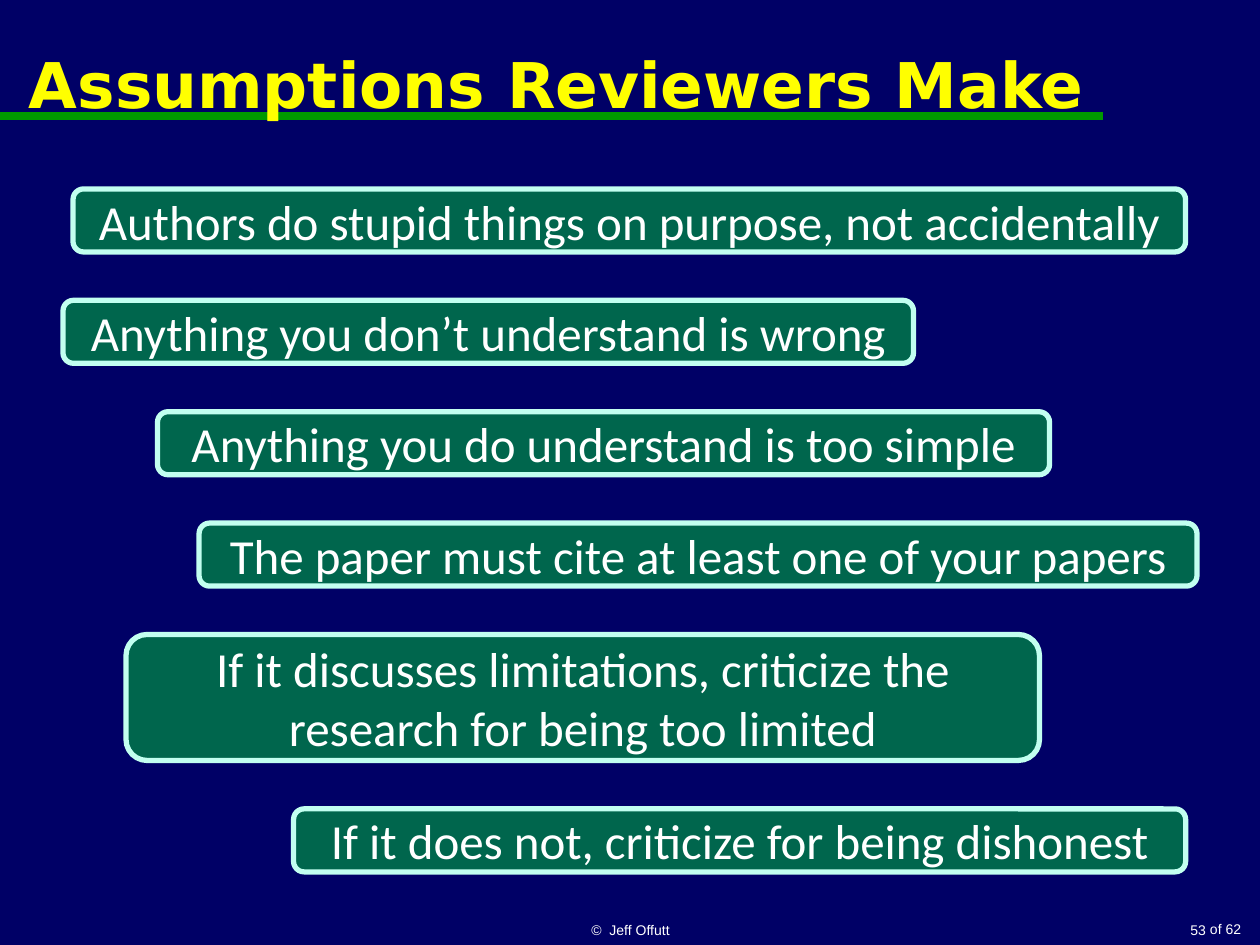
from dataclasses import dataclass

import pptx
import pptx.dml.color
import pptx.enum.shapes
import pptx.enum.text
import pptx.oxml.ns
import pptx.util
from lxml import etree

Inches = pptx.util.Inches
Pt = pptx.util.Pt
RGBColor = pptx.dml.color.RGBColor
Align = pptx.enum.text.PP_ALIGN
Anchor = pptx.enum.text.MSO_ANCHOR

NAVY = RGBColor(0x00, 0x00, 0x66)
RULE_GREEN = RGBColor(0x00, 0x99, 0x00)
BOX_GREEN = RGBColor(0x00, 0x66, 0x4D)
MINT = RGBColor(0xC2, 0xFF, 0xF0)
YELLOW = RGBColor(0xFF, 0xFF, 0x00)
WHITE = RGBColor(0xFF, 0xFF, 0xFF)

FIRST_TOP, LAST_BOTTOM = 1.5, 6.92


@dataclass(frozen=True)
class Assumption:
    text: str
    left: float
    width: float
    height: float = 0.5


@dataclass(frozen=True)
class Label:
    text: str
    left: float
    top: float
    width: float
    height: float
    align: Align
    anchor: Anchor = Anchor.BOTTOM
    font: str = "Arial"
    size: int = 8
    color: RGBColor = WHITE
    bold: bool = False
    wrap: bool = True


ASSUMPTIONS = [
    Assumption("Authors do stupid things on purpose, not accidentally", 0.58, 8.83),
    Assumption("Anything you don’t understand is wrong", 0.5, 6.75),
    Assumption("Anything you do understand is too simple", 1.25, 7.08),
    Assumption("The paper must cite at least one of your papers", 1.58, 7.92),
    Assumption("If it discusses limitations, criticize the research for being too limited",
               1, 7.25, 1),
    Assumption("If it does not, criticize for being dishonest", 2.33, 7.08),
]

LABELS = [
    Label("of 62", 9.5, 7.26, 0.45, 0.24, Align.RIGHT, Anchor.TOP, wrap=False),
    Label("Assumptions Reviewers Make", 0.08, 0, 8.67, 1.33, Align.CENTER,
          Anchor.MIDDLE, "DejaVu Sans", 36, YELLOW, bold=True),
    Label("©  Jeff Offutt", 3.42, 7.17, 3.17, 0.33, Align.CENTER),
    Label("53", 7.92, 7.17, 1.75, 0.33, Align.RIGHT),
]


def write_text(frame: pptx.text.text.TextFrame, text: str, align: Align, anchor: Anchor,
               font: str, size: int, color: RGBColor, bold: bool = False,
               wrap: bool = True) -> None:
    frame.word_wrap = wrap
    frame.vertical_anchor = anchor
    paragraph = frame.paragraphs[0]
    paragraph.text = text
    paragraph.alignment = align
    paragraph.font.name = font
    paragraph.font.size = Pt(size)
    paragraph.font.bold = bold
    paragraph.font.color.rgb = color


def draw_title_rule(slide: pptx.slide.Slide) -> None:
    rule = slide.shapes.add_connector(pptx.enum.shapes.MSO_CONNECTOR.STRAIGHT,
                                      Inches(0), Inches(0.92), Inches(8.75), Inches(0.92))
    rule.line.color.rgb = RULE_GREEN
    rule.line.width = Pt(4.5)
    etree.SubElement(rule._element.spPr, pptx.oxml.ns.qn("a:effectLst"))


def draw_label(slide: pptx.slide.Slide, label: Label) -> None:
    box = slide.shapes.add_textbox(Inches(label.left), Inches(label.top),
                                   Inches(label.width), Inches(label.height))
    write_text(box.text_frame, label.text, label.align, label.anchor, label.font,
               label.size, label.color, label.bold, label.wrap)


def draw_assumption(slide: pptx.slide.Slide, assumption: Assumption, top: float) -> None:
    box = slide.shapes.add_shape(pptx.enum.shapes.MSO_SHAPE.ROUNDED_RECTANGLE,
                                 Inches(assumption.left), Inches(top),
                                 Inches(assumption.width), Inches(assumption.height))
    box.shadow.inherit = False
    box.fill.solid()
    box.fill.fore_color.rgb = BOX_GREEN
    box.line.color.rgb = MINT
    box.line.width = Pt(3)
    write_text(box.text_frame, assumption.text, Align.CENTER, Anchor.MIDDLE,
               "Calibri", 28, WHITE)


def main() -> None:
    deck = pptx.Presentation()
    deck.slide_width, deck.slide_height = Inches(10), Inches(7.5)
    slide = deck.slides.add_slide(deck.slide_layouts[6])
    slide.background.fill.solid()
    slide.background.fill.fore_color.rgb = NAVY

    # Title, its rule and the footer
    draw_title_rule(slide)
    for label in LABELS:
        draw_label(slide, label)

    # Assumptions, stacked with equal gaps
    filled = sum(assumption.height for assumption in ASSUMPTIONS)
    gap = (LAST_BOTTOM - FIRST_TOP - filled) / (len(ASSUMPTIONS) - 1)
    top = FIRST_TOP
    for assumption in ASSUMPTIONS:
        draw_assumption(slide, assumption, top)
        top += assumption.height + gap

    deck.save("out.pptx")


if __name__ == "__main__":
    main()
